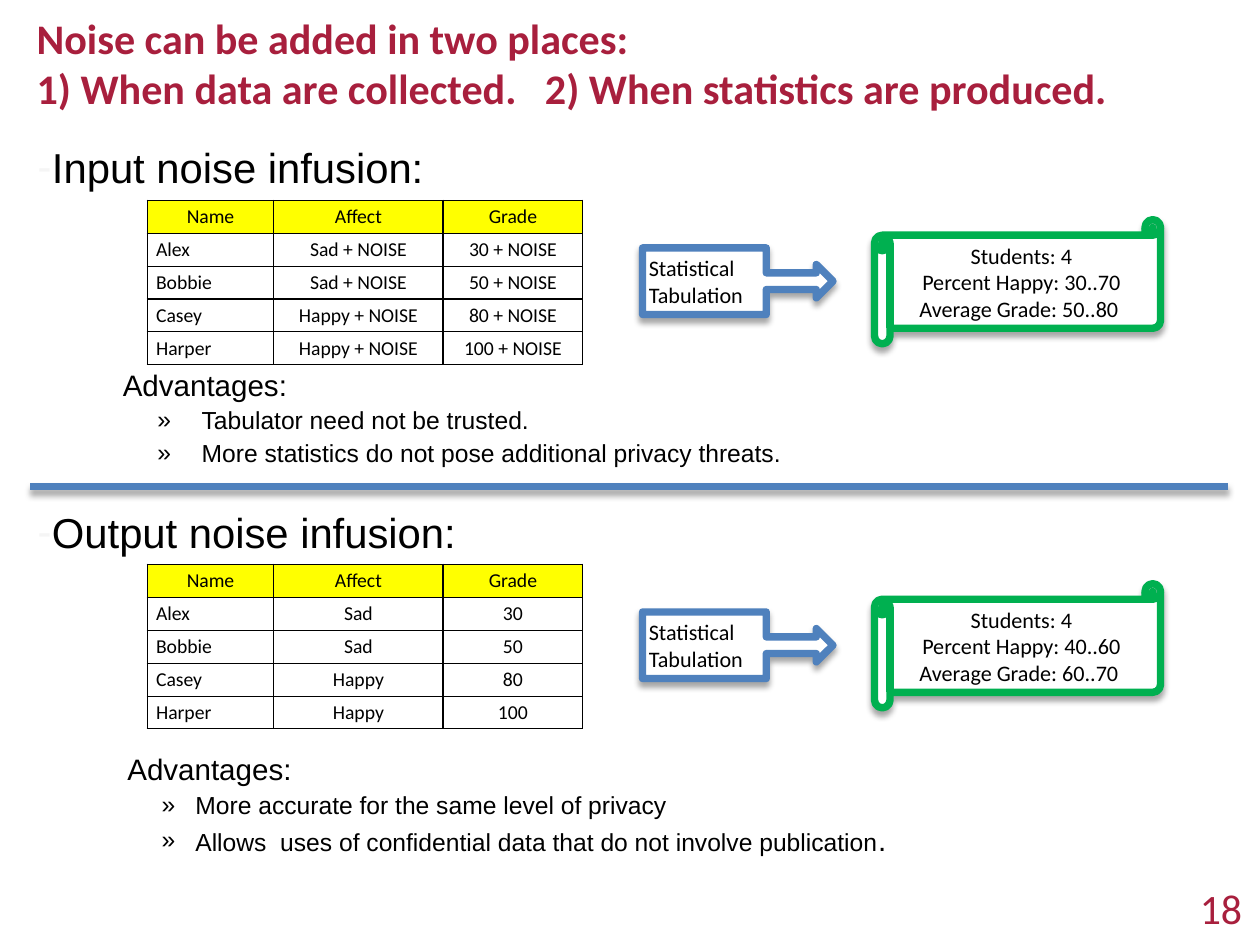
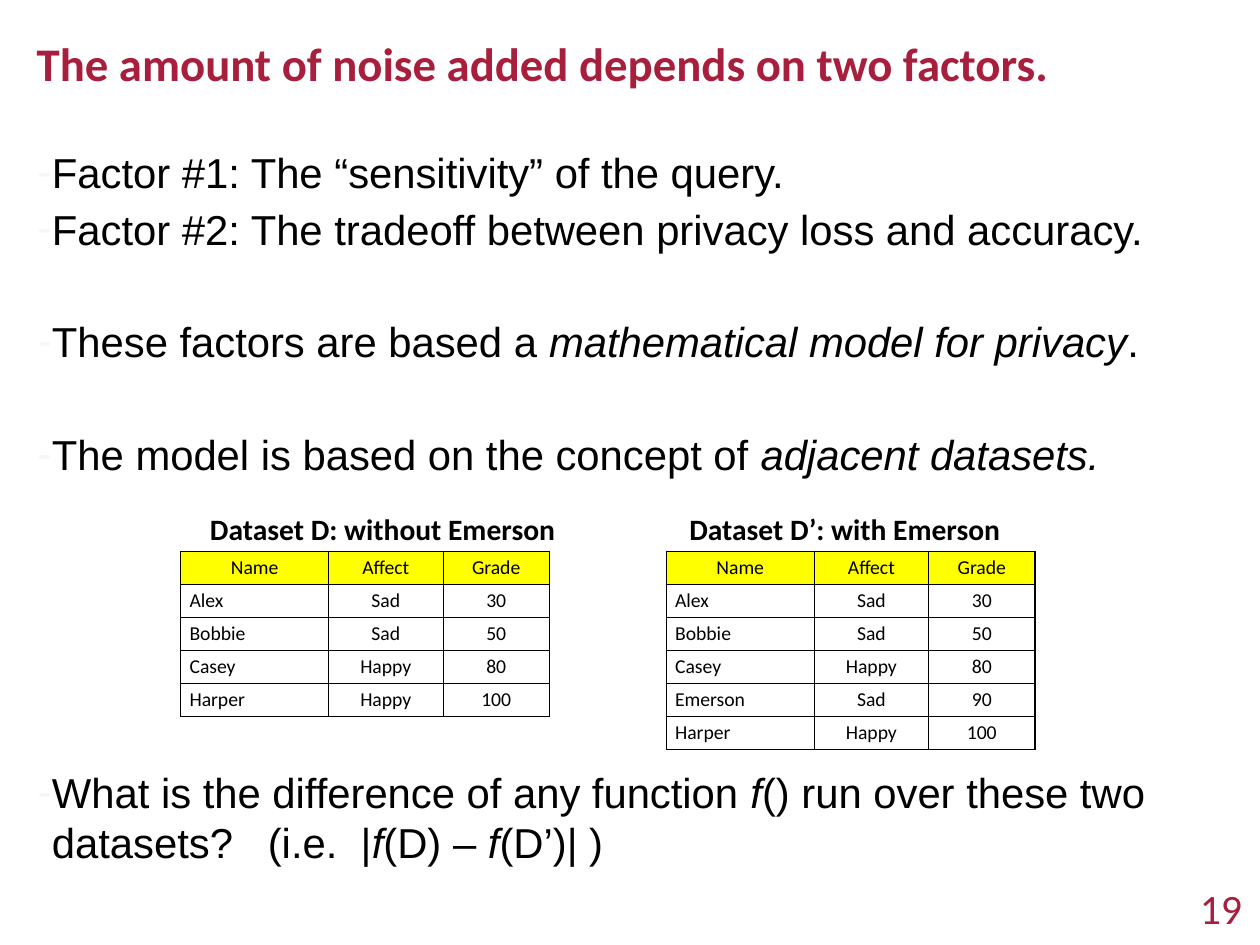
from dataclasses import dataclass

from lxml.etree import SubElement
from pptx import Presentation
from pptx.dml.color import RGBColor
from pptx.enum.shapes import MSO_CONNECTOR, MSO_SHAPE
from pptx.enum.text import MSO_ANCHOR, MSO_AUTO_SIZE, PP_ALIGN
from pptx.oxml.ns import qn
from pptx.util import Cm, Pt


@dataclass(frozen=True)
class Theme:
    crimson: RGBColor = RGBColor(0xA8, 0x1F, 0x3D)
    black: RGBColor = RGBColor(0, 0, 0)
    white: RGBColor = RGBColor(0xFF, 0xFF, 0xFF)
    yellow: RGBColor = RGBColor(0xFF, 0xFF, 0)
    blue: RGBColor = RGBColor(0x4F, 0x81, 0xBD)
    green: RGBColor = RGBColor(0, 0xB0, 0x50)
    faint: RGBColor = RGBColor(0xF5, 0xF5, 0xF5)
    heading_font: str = "Calibri"
    body_font: str = "Arial"
    title: float = 38
    long_title: float = 34.2
    body: float = 34
    sub: float = 24
    point: float = 20
    label: float = 18
    cell: float = 16
    number: float = 34
    heavy_line: float = 6
    gap: float = 5
    wide_gap: float = 50.8


THEME = Theme()


@dataclass(frozen=True)
class Span:
    text: str
    italic: bool = False
    size: float | None = None


@dataclass(frozen=True)
class Level:
    depth: int
    size: float
    margin: float
    indent: float
    bullet: str = ""
    bullet_color: RGBColor = THEME.black


@dataclass(frozen=True)
class Line:
    level: Level
    spans: tuple[Span, ...]
    before: float = THEME.gap


@dataclass(frozen=True)
class Infusion:
    """One half of the noise slide: a table, a tabulation arrow and its results."""
    top: float
    grades: list[tuple[str, ...]]
    results: list[str]


@dataclass(frozen=True)
class Dataset:
    left: float
    caption_left: float
    caption: str
    grades: list[tuple[str, ...]]


TOPIC = Level(0, THEME.body, 0.41, -0.41, "-", THEME.faint)
INPUT_SUB = Level(3, THEME.sub, 2.44, 0)
INPUT_POINT = Level(4, THEME.point, 4.7, -1.27, "»")
OUTPUT_SUB = Level(3, THEME.sub, 2.57, 0)
OUTPUT_POINT = Level(4, THEME.point, 4.52, -0.97, "»")

HEADER = ("Name", "Affect", "Grade")
GRADES = [("Alex", "Sad", "30"), ("Bobbie", "Sad", "50"),
          ("Casey", "Happy", "80"), ("Harper", "Happy", "100")]
NOISY_GRADES = [(name, f"{affect} + NOISE", f"{grade} + NOISE") for name, affect, grade in GRADES]
EMERSON_GRADES = [*GRADES[:3], ("Emerson", "Sad", "90"), GRADES[3]]

INFUSIONS = [
    Infusion(5.74, NOISY_GRADES,
             ["Students: 4", "Percent Happy: 30..70\vAverage Grade: 50..80 "]),
    Infusion(16.18, GRADES,
             ["Students: 4", "Percent Happy: 40..60\vAverage Grade: 60..70 "]),
]
INFUSION_LINES = [
    Line(TOPIC, (Span("Input noise infusion:"),), 0),
    Line(INPUT_SUB, (Span("Advantages:"),), 145),
    Line(INPUT_POINT, (Span("Tabulator need not be trusted."),)),
    Line(INPUT_POINT, (Span("More statistics do not pose additional privacy threats."),)),
    Line(TOPIC, (Span("Output noise infusion:"),), 36),
    Line(OUTPUT_SUB, (Span("Advantages:"),), 160.5),
    Line(OUTPUT_POINT, (Span("More accurate for the same level of privacy"),)),
    Line(OUTPUT_POINT, (
        Span("Allows  uses of confidential data that do not involve publication"),
        Span(".", size=THEME.sub))),
]
DATASETS = [
    Dataset(5.18, 5.84, "Dataset D: without Emerson", GRADES),
    Dataset(19.1, 19.58, "Dataset D’: with Emerson", EMERSON_GRADES),
]
FACTOR_LINES = [
    Line(TOPIC, (Span("Factor #1: The “sensitivity” of the query."),), 0),
    Line(TOPIC, (Span("Factor #2: The tradeoff between privacy loss and accuracy."),)),
    Line(TOPIC, (Span("These factors are based a "),
                 Span("mathematical model for privacy", italic=True), Span(".")),
         THEME.wide_gap),
    Line(TOPIC, (Span("The model is based on the concept of "),
                 Span("adjacent datasets.", italic=True)), THEME.wide_gap),
    Line(TOPIC, (Span("What is the difference of any function "), Span("f", italic=True),
                 Span("() run over these two datasets?   (i.e.  |"), Span("f", italic=True),
                 Span("(D) – "), Span("f", italic=True), Span("(D’)| )")), 234),
]


def style(para, size: float, color: RGBColor = THEME.black, font: str = THEME.heading_font,
          bold: bool = False, align=PP_ALIGN.LEFT) -> None:
    para.alignment = align
    para.font.name = font
    para.font.size = Pt(size)
    para.font.bold = bold
    para.font.color.rgb = color


def place(shape, left: float, top: float, width: float, height: float) -> None:
    shape.left, shape.top, shape.width, shape.height = map(Cm, (left, top, width, height))


def set_frame(frame, anchor) -> None:
    frame.word_wrap = True
    frame.auto_size = MSO_AUTO_SIZE.NONE
    frame.vertical_anchor = anchor
    frame.margin_left = frame.margin_right = frame.margin_top = frame.margin_bottom = Cm(0.18)


def add_shadow(shape) -> None:
    effects = SubElement(shape._element.spPr, qn("a:effectLst"))
    shadow = SubElement(effects, qn("a:outerShdw"), blurRad=str(Pt(5)), dist=str(Pt(4)),
                        dir="5400000", rotWithShape="0")
    color = SubElement(shadow, qn("a:srgbClr"), val=str(THEME.black))
    SubElement(color, qn("a:alpha"), val="35000")


def set_bullet(para, level: Level) -> None:
    props = para._p.get_or_add_pPr()
    props.set("marL", str(Cm(level.margin)))
    props.set("indent", str(Cm(level.indent)))
    if not level.bullet:
        SubElement(props, qn("a:buNone"))
        return
    color = SubElement(props, qn("a:buClr"))
    SubElement(color, qn("a:srgbClr"), val=str(level.bullet_color))
    SubElement(props, qn("a:buFont"), typeface=THEME.body_font)
    SubElement(props, qn("a:buChar"), char=level.bullet)


def fill_body(body, lines: list[Line], spacing: float) -> None:
    place(body, 0.9, 4.04, 34.32, 21.39)
    frame = body.text_frame
    set_frame(frame, MSO_ANCHOR.TOP)
    for index, line in enumerate(lines):
        para = frame.add_paragraph() if index else frame.paragraphs[0]
        para.level = line.level.depth
        para.line_spacing = spacing
        para.space_before = Pt(line.before)
        para.space_after = Pt(0)
        set_bullet(para, line.level)
        style(para, line.level.size, font=THEME.body_font)
        for part in line.spans:
            span = para.add_run()
            span.text = part.text
            if part.italic:
                span.font.italic = True
            if part.size:
                span.font.size = Pt(part.size)


def add_text(page, left: float, top: float, width: float, height: float, text: str):
    box = page.shapes.add_textbox(Cm(left), Cm(top), Cm(width), Cm(height))
    set_frame(box.text_frame, MSO_ANCHOR.MIDDLE)
    para = box.text_frame.paragraphs[0]
    para.text = text
    return para


def add_page(deck, number: int, title: str, title_size: float, lines: list[Line],
             spacing: float = 1.0):
    """Add a page with its title, body lines and page number."""
    page = deck.slides.add_slide(deck.slide_layouts[1])
    heading = page.shapes.title
    place(heading, 0.87, 0, 34.32, 3.58)
    set_frame(heading.text_frame, MSO_ANCHOR.MIDDLE)
    para = heading.text_frame.paragraphs[0]
    para.text = title
    style(para, title_size, THEME.crimson, bold=True)
    fill_body(page.placeholders[1], lines, spacing)
    para = add_text(page, 33.55, 25.12, 2.24, 1.83, str(number))
    style(para, THEME.number, THEME.crimson, align=PP_ALIGN.RIGHT)
    return page


def set_borders(cell) -> None:
    props = cell._tc.get_or_add_tcPr()
    for index, side in enumerate(("lnL", "lnR", "lnT", "lnB")):
        border = props.makeelement(qn(f"a:{side}"), {"w": str(Pt(1))})
        fill = SubElement(border, qn("a:solidFill"))
        SubElement(fill, qn("a:srgbClr"), val=str(THEME.black))
        props.insert(index, border)


def add_grades(page, left: float, top: float, widths: tuple[float, ...],
               grades: list[tuple[str, ...]]) -> None:
    rows = [HEADER, *grades]
    row_height = 0.93
    frame = page.shapes.add_table(len(rows), len(widths), Cm(left), Cm(top),
                                  Cm(sum(widths)), Cm(row_height * len(rows)))
    table = frame.table
    table.first_row = table.horz_banding = False
    for column, width in zip(table.columns, widths):
        column.width = Cm(width)
    for r, row in enumerate(rows):
        table.rows[r].height = Cm(row_height)
        for c, text in enumerate(row):
            cell = table.cell(r, c)
            if r == 0:
                cell.fill.solid()
                cell.fill.fore_color.rgb = THEME.yellow
            else:
                cell.fill.background()
            set_borders(cell)
            para = cell.text_frame.paragraphs[0]
            para.text = text
            style(para, THEME.cell, align=PP_ALIGN.LEFT if r and c == 0 else PP_ALIGN.CENTER)


def add_outlined(page, kind, left: float, top: float, width: float, height: float,
                 color: RGBColor, texts: list[str], align) -> None:
    shape = page.shapes.add_shape(kind, Cm(left), Cm(top), Cm(width), Cm(height))
    shape.fill.solid()
    shape.fill.fore_color.rgb = THEME.white
    shape.line.color.rgb = color
    shape.line.width = Pt(THEME.heavy_line)
    add_shadow(shape)
    frame = shape.text_frame
    set_frame(frame, MSO_ANCHOR.MIDDLE)
    for index, text in enumerate(texts):
        para = frame.add_paragraph() if index else frame.paragraphs[0]
        para.text = text
        style(para, THEME.label, align=align)


def add_infusion(page, infusion: Infusion) -> None:
    add_grades(page, 4.22, infusion.top, (3.63, 4.85, 4.01), infusion.grades)
    add_outlined(page, MSO_SHAPE.HORIZONTAL_SCROLL, 25.07, infusion.top + 0.56, 8.2, 3.56,
                 THEME.green, infusion.results, PP_ALIGN.CENTER)
    add_outlined(page, MSO_SHAPE.RIGHT_ARROW_CALLOUT, 18.42, infusion.top + 1.37, 5.46, 1.91,
                 THEME.blue, ["Statistical Tabulation"], PP_ALIGN.LEFT)


def add_divider(page) -> None:
    divider = page.shapes.add_connector(MSO_CONNECTOR.STRAIGHT, Cm(0.86), Cm(13.95),
                                        Cm(35.2), Cm(13.95))
    divider.line.color.rgb = THEME.blue
    divider.line.width = Pt(THEME.heavy_line)
    add_shadow(divider)


def add_dataset(page, dataset: Dataset) -> None:
    add_grades(page, dataset.left, 15.82, (4.24, 3.28, 3.05), dataset.grades)
    para = add_text(page, dataset.caption_left, 14.45, 10.6, 1.4, dataset.caption)
    style(para, THEME.sub, bold=True)


def main() -> None:
    deck = Presentation()
    deck.slide_width, deck.slide_height = Cm(36.12), Cm(27.1)

    page = add_page(deck, 18, "Noise can be added in two places:\v"
                    "1) When data are collected.   2) When statistics are produced.",
                    THEME.long_title, INFUSION_LINES, 0.9)
    for infusion in INFUSIONS:
        add_infusion(page, infusion)
    add_divider(page)

    page = add_page(deck, 19, "The amount of noise added depends on two factors.",
                    THEME.title, FACTOR_LINES)
    for dataset in DATASETS:
        add_dataset(page, dataset)

    deck.save("out.pptx")


if __name__ == "__main__":
    main()
